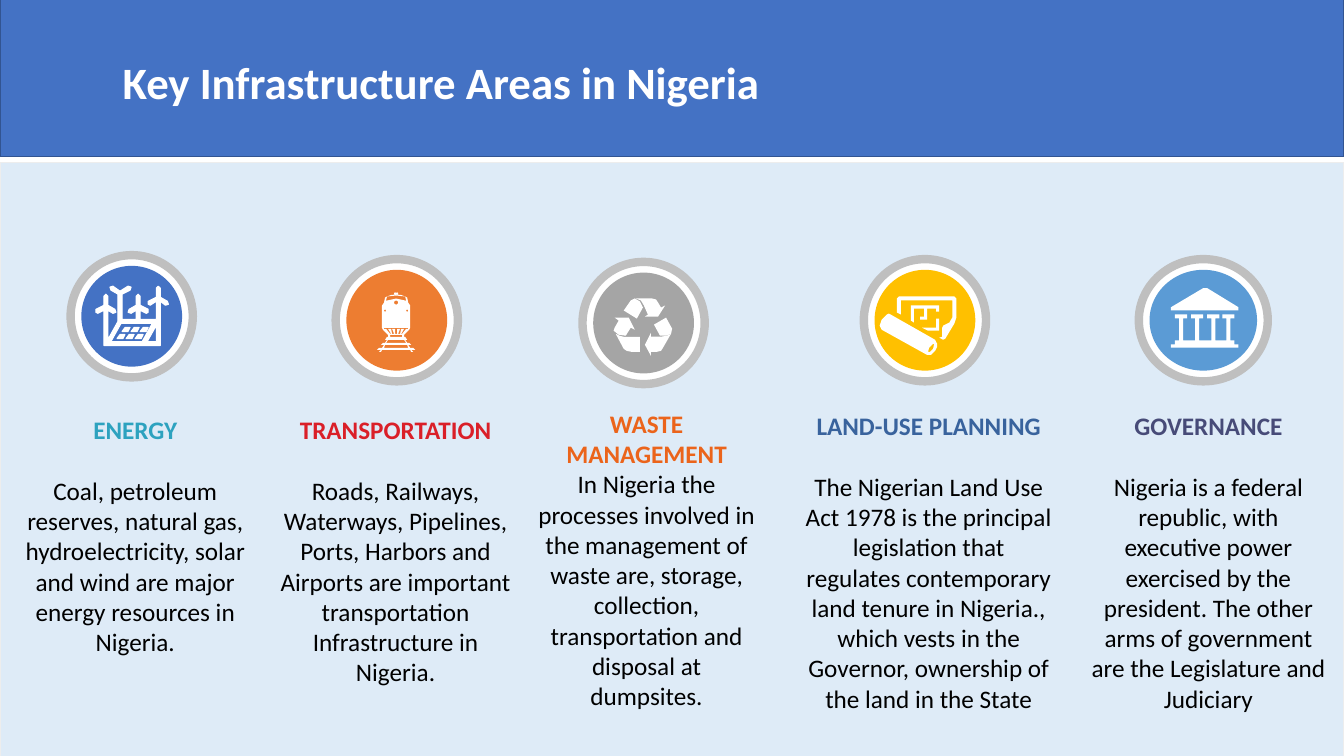
from dataclasses import dataclass
from math import cos, pi, sin

from pptx import Presentation
from pptx.dml.color import RGBColor
from pptx.enum.shapes import MSO_SHAPE
from pptx.enum.text import MSO_AUTO_SIZE, PP_ALIGN
from pptx.util import Cm, Pt

RECT, OVAL = MSO_SHAPE.RECTANGLE, MSO_SHAPE.OVAL
CENTER = PP_ALIGN.CENTER
FIT_TEXT = MSO_AUTO_SIZE.SHAPE_TO_FIT_TEXT

FONT = "Calibri"
WHITE = RGBColor(0xFF, 0xFF, 0xFF)
BLACK = RGBColor(0x00, 0x00, 0x00)
BLUE = RGBColor(0x44, 0x72, 0xC4)
BLUE_EDGE = RGBColor(0x32, 0x54, 0x91)
PALE_BLUE = RGBColor(0xDE, 0xEB, 0xF7)
PALE_EDGE = RGBColor(0xED, 0xED, 0xED)
RING_GRAY = RGBColor(0xBF, 0xBF, 0xBF)
ORANGE = RGBColor(0xED, 0x7D, 0x31)
GRAY = RGBColor(0xA5, 0xA5, 0xA5)
GOLD = RGBColor(0xFF, 0xC0, 0x00)
SKY = RGBColor(0x5B, 0x9B, 0xD5)
TEAL = RGBColor(0x2D, 0xA2, 0xBF)
RED = RGBColor(0xDA, 0x1F, 0x28)
RUST = RGBColor(0xEB, 0x64, 0x1B)
STEEL = RGBColor(0x39, 0x63, 0x9D)
INDIGO = RGBColor(0x47, 0x4B, 0x78)

ICON_UNIT = Cm(0.0254)
RING_HEIGHT = 3.08
RING_INSET = 0.27

Contour = list[tuple[float, float]]
Part = list[Contour]


def mirrored(half: Contour) -> Contour:
    """Close a right half with its reflection in the train's axis, x = 19."""
    return half + [(38 - x, y) for x, y in reversed(half)]


def circle(cx: float, cy: float, r: float) -> Contour:
    return [(cx + r * cos(pi * i / 8), cy + r * sin(pi * i / 8)) for i in range(16)]


TURBINES = [
    (9, 10), (11, 8), (13, 10), (13, 19), (20, 23), (21, 26), (18, 27), (13, 24),
    (13, 53), (23, 35), (23, 8), (16, 4), (15, 1), (18, 0), (25, 5), (33, 0),
    (36, 1), (35, 4), (27, 8), (27, 33), (41, 33), (41, 24), (36, 27), (33, 26),
    (34, 23), (41, 19), (41, 10), (43, 8), (45, 10), (45, 19), (53, 23), (53, 26),
    (51, 27), (45, 24), (45, 33), (61, 33), (61, 15), (55, 19), (53, 18), (53, 15),
    (61, 11), (61, 2), (63, 0), (65, 2), (65, 11), (72, 15), (73, 18), (70, 19),
    (65, 15), (65, 59), (9, 59), (9, 24), (3, 27), (1, 26), (1, 23), (9, 19)]
SOLAR_CELLS = [[(x + 9 * i, y), (x + 9 * i + 6, y), (x + 9 * i + 8, y - 4), (x + 9 * i + 3, y - 4)]
               for x, y in ((22, 52), (27, 45)) for i in range(3)]
ENERGY_ICON: list[Part] = [[
    TURBINES, [(52, 55), (61, 55), (61, 39)],
    [(16, 55), (47, 55), (57, 37), (26, 37)], *SOLAR_CELLS]]

TRAIN_BODY = mirrored([
    (19, 2), (24, 2.5), (28, 4), (30, 5), (31, 10), (33, 13), (33, 35), (32, 37),
    (27, 42), (27, 44), (28, 44), (30, 47), (28, 47), (30, 50), (32, 50), (34, 52),
    (31, 52), (33, 55), (36, 55), (38, 57), (34, 57), (36, 59), (34, 59), (33, 57)])
WINDSHIELD = mirrored([(19, 3), (28, 4), (29, 8), (28, 8), (19, 6)])
GRILLE = mirrored([
    (19, 35), (31, 35), (31, 36), (29, 36), (25, 41), (24, 41), (27, 36), (24, 36),
    (23, 41), (21, 41), (23, 36), (20, 36), (20, 41), (19, 41)])
TRACK_GAPS = [mirrored([(top, y), (bottom, y + h)])
              for top, bottom, y, h in ((25, 25, 42, 2), (27, 29, 47, 3), (30, 31, 52, 3))]
TRAIN_ICON: list[Part] = [[
    TRAIN_BODY, WINDSHIELD, GRILLE, *TRACK_GAPS, circle(19, 10, 2),
    *(circle(x, y, 1) for x, y in ((8, 18), (30, 18), (18, 1), (20, 1)))]]

RECYCLING_ICON: list[Part] = [
    [[(41, 28), (53, 21), (59, 32), (58, 37), (53, 39), (47, 39)]],
    [[(38, 36), (32, 48), (38, 59), (38, 55), (44, 55), (48, 54), (50, 51),
      (58, 37), (54, 39), (48, 40), (38, 40)]],
    [[(24, 22), (11, 14), (18, 4), (22, 2), (27, 5), (30, 11)]],
    [[(32, 20), (45, 20), (52, 9), (48, 11), (45, 6), (43, 3), (39, 2), (23, 2),
      (28, 4), (31, 9), (35, 18)]],
    [[(2, 21), (6, 24), (2, 31), (1, 34), (6, 38), (13, 39), (18, 31), (22, 33), (16, 21)]],
    [[(3, 37), (11, 52), (14, 54), (19, 55), (27, 55), (27, 40), (11, 40), (7, 39)]]]

PLAN_ICON: list[Part] = [
    [[(59, 41), (63, 43), (65, 42), (74, 27), (76, 21), (76, 2), (74, 0), (19, 0),
      (17, 2), (17, 16), (21, 18), (21, 4), (72, 4), (72, 21), (69, 26), (63, 29),
      (62, 31), (62, 40)]],
    [[(56, 31), (42, 31), (48, 34), (59, 34), (59, 22), (56, 22)]],
    [[(59, 9), (31, 9), (31, 24), (34, 26), (34, 12), (44, 12), (44, 20), (40, 20),
      (40, 23), (47, 23), (47, 12), (56, 12), (56, 15), (59, 15)]],
    [[(7, 18), (2, 23), (0, 29), (2, 33), (47, 58), (51, 58), (55, 54), (57, 50),
      (57, 47), (55, 43), (11, 18), (9, 17)],
     [(53, 47), (54, 47), (53, 52), (50, 55), (48, 55), (49, 51)]]]

COLUMNS = [(x + dx, y) for x in (4, 20, 36, 51) for dx, y in (
    (4, 52), (4, 30), (0, 30), (0, 26), (12, 26), (12, 30), (8, 30), (8, 52))]
GOVERNMENT_ICON: list[Part] = [
    [[(4, 52), *COLUMNS, (63, 52), (63, 56), (67, 56), (67, 59), (0, 59), (0, 56), (4, 56)]],
    [[(32, 0), (36, 0), (67, 19), (67, 22), (0, 22), (0, 19)]]]


@dataclass
class Area:
    """One infrastructure area; boxes are left, top, width, height in cm."""
    heading: str
    heading_color: RGBColor
    body: str
    text_box: tuple[float, float, float, float]
    ring: tuple[float, float]
    disc_color: RGBColor
    icon: list[Part]
    icon_at: tuple[float, float]
    ring_width: float = RING_HEIGHT
    heading_gap: float = 22
    icon_line: float = 0


AREAS = [
    Area("ENERGY", TEAL,
         "Coal, petroleum reserves, natural gas, hydroelectricity, solar and wind are major "
         "energy resources in Nigeria.",
         (0.3, 10.31, 6.22, 6.43), (1.78, 6.43), BLUE, ENERGY_ICON, (2.39, 7.21), icon_line=0.75),
    Area("TRANSPORTATION", RED,
         "Roads, Railways, Waterways, Pipelines, Ports, Harbors and Airports are important "
         "transportation Infrastructure in Nigeria.",
         (6.63, 10.31, 6.68, 7.19), (8.46, 6.53), ORANGE, TRAIN_ICON, (9.5, 7.37)),
    Area("WASTE MANAGEMENT", RUST,
         "In Nigeria the processes involved in the management of waste are, storage, "
         "collection, transportation and disposal at dumpsites.",
         (13.21, 10.16, 6.17, 7.95), (14.68, 6.6), GRAY, RECYCLING_ICON, (15.44, 7.47),
         heading_gap=0),
    Area("LAND-USE PLANNING", STEEL,
         "The Nigerian Land Use Act 1978 is the principal legislation that regulates "
         "contemporary land tenure in Nigeria., which vests in the Governor, ownership of "
         "the land in the State",
         (19.99, 10.21, 6.83, 7.95), (21.77, 6.53), GOLD, PLAN_ICON, (22.17, 7.47)),
    Area("GOVERNANCE", INDIGO,
         "Nigeria is a federal republic, with executive power exercised by the president. "
         "The other arms of government are the Legislature and Judiciary",
         (27.23, 10.21, 6.45, 7.95), (28.7, 6.53), SKY, GOVERNMENT_ICON, (29.51, 7.26),
         ring_width=3.25),
]


def paint(sp, fill: RGBColor, line: RGBColor, width: float) -> None:
    sp.shadow.inherit = False
    sp.fill.solid()
    sp.fill.fore_color.rgb = fill
    if width:
        sp.line.color.rgb = line
        sp.line.width = Pt(width)
    else:
        sp.line.fill.background()


def add_preset(s, kind, box: tuple, fill: RGBColor, line: RGBColor = WHITE, width: float = 0) -> None:
    paint(s.shapes.add_shape(kind, *map(Cm, box)), fill, line, width)


def add_text_box(s, box: tuple):
    tf = s.shapes.add_textbox(*map(Cm, box)).text_frame
    tf.word_wrap = True
    return tf


def set_text(p, text: str, size: float, color: RGBColor, bold: bool) -> None:
    p.text = text
    p.font.name, p.font.size, p.font.bold = FONT, Pt(size), bold
    p.font.color.rgb = color


def add_icon(s, area: Area) -> None:
    for part in area.icon:
        outlines = [[(x * ICON_UNIT, y * ICON_UNIT) for x, y in contour] for contour in part]
        fb = s.shapes.build_freeform(*outlines[0][0])
        for outline in outlines:
            if outline is not outlines[0]:
                fb.move_to(*outline[0])
            fb.add_line_segments(outline[1:], close=True)
        paint(fb.convert_to_shape(*map(Cm, area.icon_at)), WHITE, WHITE, area.icon_line)


def add_area(s, area: Area) -> None:
    x, y = area.ring
    add_preset(s, OVAL, (x, y, area.ring_width, RING_HEIGHT), WHITE, RING_GRAY, 6)
    add_preset(s, OVAL, (x + RING_INSET, y + RING_INSET, area.ring_width - 2 * RING_INSET,
                         RING_HEIGHT - 2 * RING_INSET), area.disc_color)
    add_icon(s, area)
    tf = add_text_box(s, area.text_box)
    tf.auto_size = FIT_TEXT
    heading, body = tf.paragraphs[0], tf.add_paragraph()
    set_text(heading, area.heading, 18, area.heading_color, True)
    set_text(body, area.body, 18, BLACK, False)
    heading.alignment = body.alignment = CENTER
    heading.space_after = Pt(area.heading_gap)


def main() -> None:
    prs = Presentation()
    prs.slide_width, prs.slide_height = Cm(33.87), Cm(19.05)
    s = prs.slides.add_slide(prs.slide_layouts[6])
    add_preset(s, RECT, (0, 4.09, 33.87, 15.14), PALE_BLUE, PALE_EDGE, 1)
    add_preset(s, RECT, (0, -0.05, 33.87, 3.99), BLUE, BLUE_EDGE, 1)
    title = add_text_box(s, (2.84, 1.4, 24.97, 1.73)).paragraphs[0]
    set_text(title, "Key Infrastructure Areas in Nigeria", 32, WHITE, True)
    title.line_spacing = 0.9
    for area in AREAS:
        add_area(s, area)
    prs.save("out.pptx")


if __name__ == "__main__":
    main()
